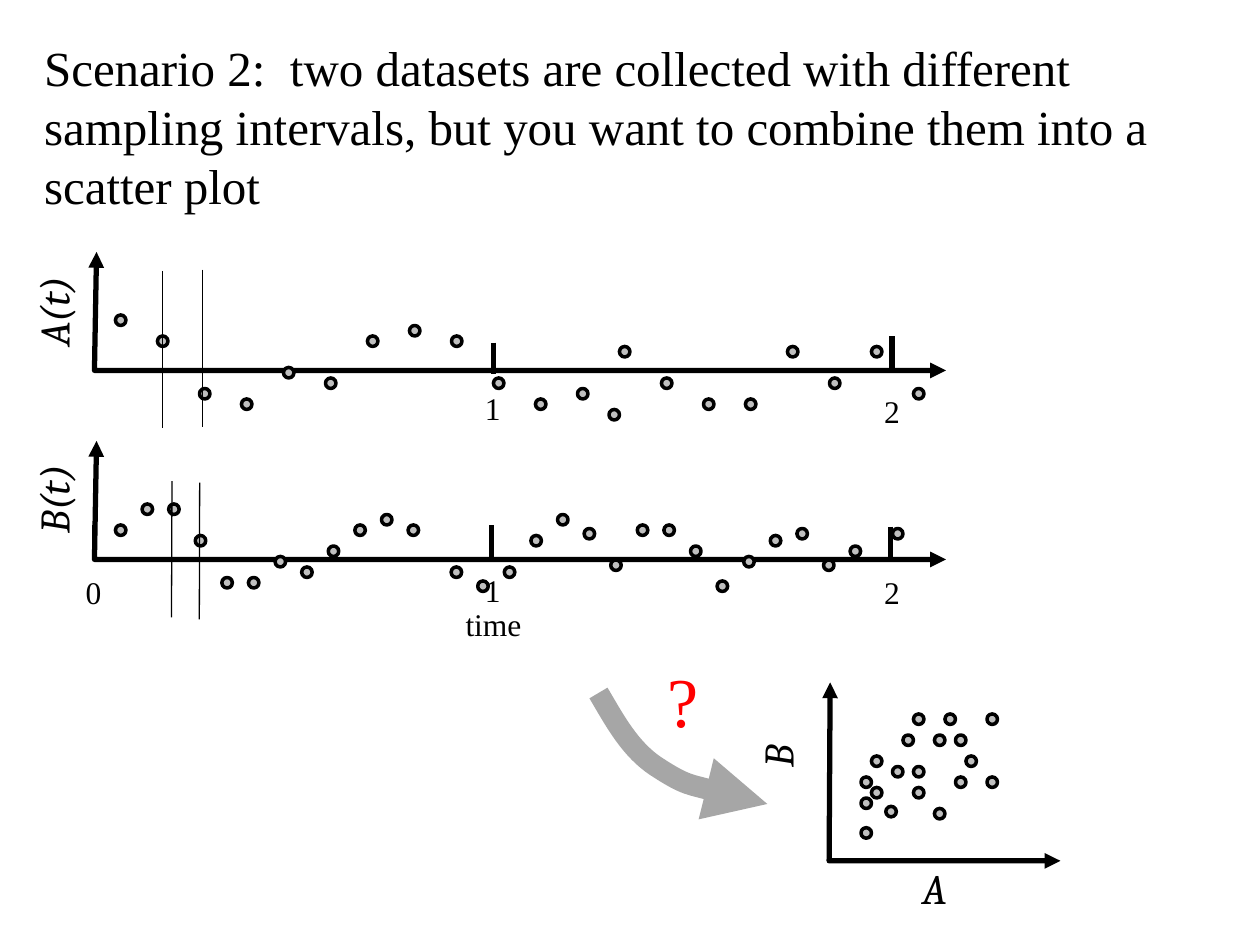
from dataclasses import dataclass

from lxml import etree
from pptx import Presentation
from pptx.dml.color import RGBColor
from pptx.enum.shapes import MSO_CONNECTOR, MSO_SHAPE
from pptx.enum.text import MSO_ANCHOR, MSO_AUTO_SIZE, PP_ALIGN
from pptx.oxml.ns import qn
from pptx.util import Pt

STRAIGHT = MSO_CONNECTOR.STRAIGHT
OVAL = MSO_SHAPE.OVAL
TOP = MSO_ANCHOR.TOP
NO_AUTOSIZE = MSO_AUTO_SIZE.NONE
LEFT, CENTER = PP_ALIGN.LEFT, PP_ALIGN.CENTER

COLORS = {"ink": "000000", "dot": "BFBFBF", "arrow": "A6A6A6", "question": "FF0000"}
SERIF, MATH = "Times New Roman", "Cambria"
TITLE = ("Scenario 2:  two datasets are collected with different sampling intervals, "
         "but you want to combine them into a scatter plot")
DOT_SIZE = 6
TICK_HEIGHT = 18


@dataclass
class Label:
    text: str
    left: float
    top: float
    width: float
    height: float
    size: float = 18
    font: str = SERIF
    color: str = "ink"
    align: PP_ALIGN = LEFT
    rotation: float = 0


@dataclass
class Line:
    x1: float
    y1: float
    x2: float
    y2: float
    weight: float


@dataclass
class Series:
    left: float
    step: float
    tops: list[float]


AXES = [
    [(55.2, 144), (54, 211.7), (540.6, 211.7)],
    [(55.2, 252), (54, 319.7), (540.6, 319.7)],
    [(474.4, 390), (473.8, 492), (606, 492)],
]
CURVE = [(342, 396), (351.4, 411.8), (360, 428.4), (375.8, 438.5),
         (392.4, 449.3), (415.4, 454.3), (438.5, 459.4)]

TICKS = [Line(x, y, x, y + TICK_HEIGHT, 3) for x, y in
         [(282.2, 195.8), (509.8, 192.2), (54, 300.2), (280.8, 300.2), (509, 301)]]
GUIDES = [
    Line(92.9, 154.8, 92.9, 244.8, 0.75),
    Line(115.9, 154.1, 115.9, 244.1, 0.75),
    Line(98.3, 275, 98, 352.8, 0.75),
    Line(114.1, 275.8, 113.9, 354, 0.75),
]

LABELS = [
    Label("A(t)", -8.6, 148.3, 77.8, 36, 24, MATH, rotation=270),
    Label("B(t)", -8.6, 254.9, 77.8, 36, 24, MATH, rotation=270),
    Label("1", 270, 218.9, 30, 30),
    Label("2", 498.2, 220.3, 30, 30),
    Label("0", 41.8, 324, 30, 30),
    Label("1", 270, 322.6, 30, 30),
    Label("2", 498.2, 324, 30, 30),
    Label("time", 234, 342, 96, 29, align=CENTER),
    Label("A", 486, 489.6, 96, 36, 24, MATH, align=CENTER),
    Label("B", 396, 414, 96, 36, 24, MATH, align=CENTER, rotation=270),
    Label("?", 366, 372, 48, 55.4, 40, color="question", align=CENTER),
]

SERIES = [
    Series(66, 24, [180, 192, 222, 228, 210, 216, 192, 186, 192, 216,
                    228, 222, 198, 216, 228, 228, 198, 216, 198, 222]),
    Series(66, 15.2, [300, 288, 288, 306, 330, 330, 318, 324, 312, 300, 294, 300]),
    Series(257.8, 15.2, [324, 332, 324, 306, 294, 302, 320, 300,
                         300, 312, 332, 318, 306, 302, 320, 312]),
]
SINGLE_DOTS = [(348, 234), (510, 302)]
SCATTER = [
    (522, 408), (498, 432), (516, 420), (522, 438), (534, 420), (498, 450), (510, 438),
    (522, 450), (534, 462), (552, 432), (540, 408), (506.2, 460.8), (564, 408),
    (492, 456), (492, 444), (546, 444), (564, 444), (546, 420), (492, 473),
]


def rgb(name: str) -> RGBColor:
    return RGBColor.from_string(COLORS[name])


def format_text(sp, label: Label) -> None:
    sp.left, sp.top = Pt(label.left), Pt(label.top)
    sp.width, sp.height = Pt(label.width), Pt(label.height)
    sp.rotation = label.rotation
    tf = sp.text_frame
    tf.word_wrap = True
    tf.auto_size = NO_AUTOSIZE
    tf.vertical_anchor = TOP
    p = tf.paragraphs[0]
    p.text = label.text
    p.alignment = label.align
    if label.font == SERIF:
        p.line_spacing = Pt(label.size * 1.2)
    p.font.name = label.font
    p.font.size = Pt(label.size)
    p.font.italic = label.font == MATH
    p.font.color.rgb = rgb(label.color)


def add_label(s, label: Label) -> None:
    format_text(s.shapes.add_textbox(0, 0, 0, 0), label)


def add_line(s, line: Line) -> None:
    sp = s.shapes.add_connector(STRAIGHT, Pt(line.x1), Pt(line.y1), Pt(line.x2), Pt(line.y2))
    sp.line.color.rgb = rgb("ink")
    sp.line.width = Pt(line.weight)
    etree.SubElement(sp.element.spPr, qn("a:effectLst"))


def add_arrow(s, points: list[tuple[float, float]], color: str, weight: float,
              ends: list[str]):
    start, *rest = [(Pt(x), Pt(y)) for x, y in points]
    builder = s.shapes.build_freeform(*start)
    builder.add_line_segments(rest, close=False)
    sp = builder.convert_to_shape()
    sp.shadow.inherit = False
    sp.fill.background()
    sp.line.color.rgb = rgb(color)
    sp.line.width = Pt(weight)
    ln = sp.element.spPr.find(qn("a:ln"))
    for end in ends:
        etree.SubElement(ln, qn(f"a:{end}"), type="triangle")
    return sp


def bend(sp) -> None:
    segments = list(sp.element.iter(qn("a:lnTo")))
    for i in range(0, len(segments), 3):
        curve = etree.Element(qn("a:cubicBezTo"))
        segments[i].addprevious(curve)
        for segment in segments[i:i + 3]:
            curve.append(segment[0])
            segment.getparent().remove(segment)


def add_dot(s, left: float, top: float) -> None:
    sp = s.shapes.add_shape(OVAL, Pt(left), Pt(top), Pt(DOT_SIZE), Pt(DOT_SIZE))
    sp.shadow.inherit = False
    sp.fill.solid()
    sp.fill.fore_color.rgb = rgb("dot")
    sp.line.color.rgb = rgb("ink")
    sp.line.width = Pt(2)


def main() -> None:
    prs = Presentation()
    prs.slide_width, prs.slide_height = Pt(720), Pt(540)
    s = prs.slides.add_slide(prs.slide_layouts[5])
    format_text(s.shapes.title, Label(TITLE, 18, 18, 702, 108.7, 28))
    for points in AXES:
        add_arrow(s, points, "ink", 3, ["headEnd", "tailEnd"])
    bend(add_arrow(s, CURVE, "arrow", 12, ["tailEnd"]))
    for line in TICKS:
        add_line(s, line)
    for label in LABELS:
        add_label(s, label)
    for series in SERIES:
        for i, top in enumerate(series.tops):
            add_dot(s, series.left + i * series.step, top)
    for left, top in SINGLE_DOTS + SCATTER:
        add_dot(s, left, top)
    for line in GUIDES:
        add_line(s, line)
    prs.save("out.pptx")


if __name__ == "__main__":
    main()
